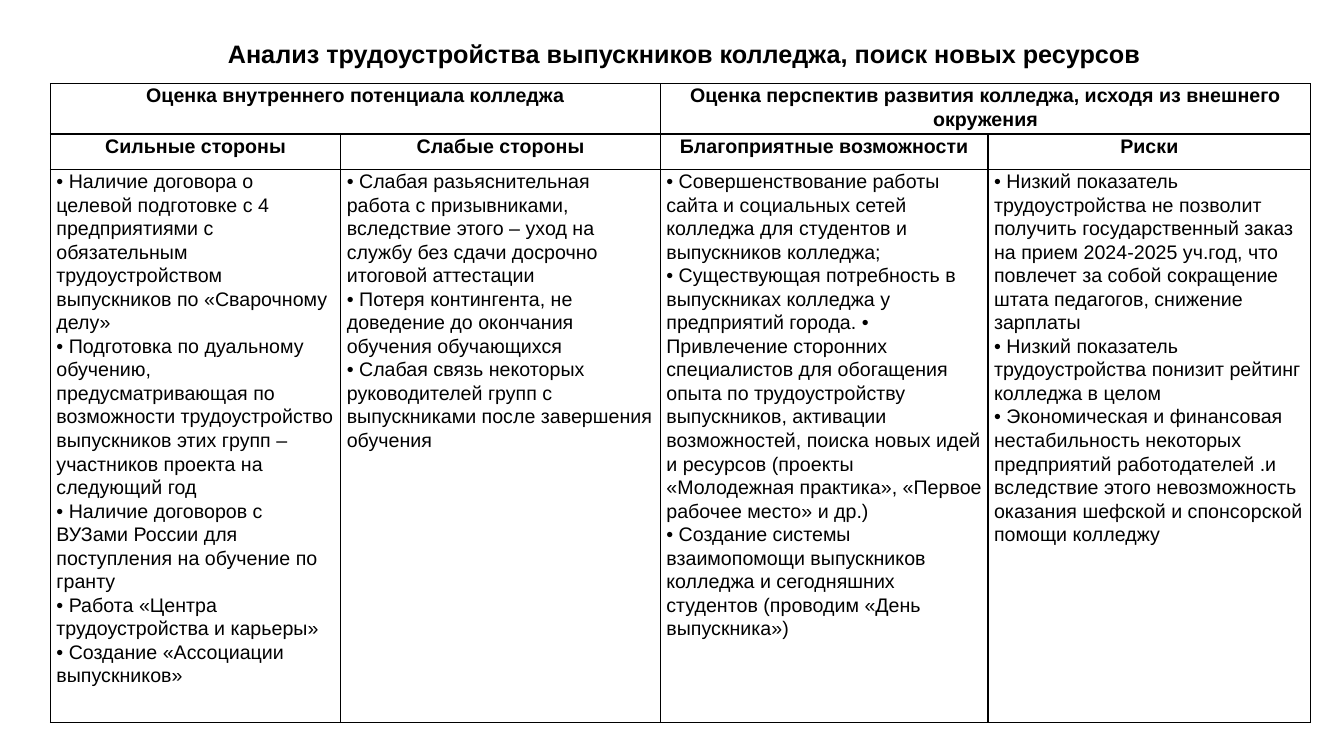
from dataclasses import dataclass

from lxml.etree import SubElement
from pptx import Presentation
from pptx.dml.color import RGBColor
from pptx.enum.text import MSO_ANCHOR, PP_ALIGN
from pptx.oxml.ns import qn
from pptx.table import Table, _Cell as TableCell
from pptx.text.text import _Paragraph as Paragraph
from pptx.util import Inches, Pt

COLORS = {"text": "000000", "border": "000000", "fill": "FFFFFF"}
FONT = "Arial"
COLUMN_WIDTHS = (2.88, 3.17, 3.25, 3.2)
ROW_HEIGHTS = (0.5, 0.35, 5.49)
TITLE = "Анализ трудоустройства выпускников колледжа, поиск новых ресурсов"


@dataclass(frozen=True)
class Factor:
    heading: str
    points: tuple[str, ...]


@dataclass(frozen=True)
class Assessment:
    heading: str
    factors: tuple[Factor, ...]


ASSESSMENTS = (
    Assessment("Оценка внутреннего потенциала колледжа", (
        Factor("Сильные стороны", (
            "• Наличие договора о целевой подготовке с 4 предприятиями с обязательным "
            "трудоустройством выпускников по «Сварочному делу»",
            "• Подготовка по дуальному обучению, предусматривающая по возможности "
            "трудоустройство выпускников этих групп – участников проекта на следующий год",
            "• Наличие договоров с ВУЗами России для поступления на обучение по гранту",
            "• Работа «Центра трудоустройства и карьеры»",
            "• Создание «Ассоциации выпускников»",
        )),
        Factor("Слабые стороны", (
            "• Слабая разьяснительная работа с призывниками, вследствие этого – уход на "
            "службу без сдачи досрочно итоговой аттестации",
            "• Потеря контингента, не доведение до окончания обучения обучающихся",
            "• Слабая связь некоторых руководителей групп с выпускниками после завершения "
            "обучения",
        )),
    )),
    Assessment("Оценка перспектив развития колледжа, исходя из внешнего окружения", (
        Factor("Благоприятные возможности", (
            "• Совершенствование работы сайта и социальных сетей колледжа для студентов и "
            "выпускников колледжа;",
            "• Существующая потребность в выпускниках колледжа у предприятий города. "
            "• Привлечение сторонних специалистов для обогащения опыта по трудоустройству "
            "выпускников, активации возможностей, поиска новых идей и ресурсов (проекты "
            "«Молодежная практика», «Первое рабочее место» и др.)",
            "• Создание системы взаимопомощи выпускников колледжа и сегодняшних студентов "
            "(проводим «День выпускника»)",
        )),
        Factor("Риски", (
            "• Низкий показатель трудоустройства не позволит получить государственный заказ "
            "на прием 2024-2025 уч.год, что повлечет за собой сокращение штата педагогов, "
            "снижение зарплаты",
            "• Низкий показатель трудоустройства понизит рейтинг колледжа в целом",
            "• Экономическая и финансовая нестабильность некоторых предприятий "
            "работодателей .и вследствие этого невозможность оказания шефской и спонсорской "
            "помощи колледжу",
        )),
    )),
)


def format_paragraph(paragraph: Paragraph, size: int, bold: bool, align: PP_ALIGN) -> None:
    paragraph.alignment = align
    paragraph.font.name = FONT
    paragraph.font.size = Pt(size)
    paragraph.font.bold = bold
    paragraph.font.color.rgb = RGBColor.from_string(COLORS["text"])


def style_cell(cell: TableCell) -> None:
    cell.margin_left = cell.margin_right = Inches(0.06)
    cell.margin_top = cell.margin_bottom = 0
    properties = cell._tc.get_or_add_tcPr()
    for side in ("lnL", "lnR", "lnT", "lnB"):
        border = SubElement(properties, qn(f"a:{side}"), w=str(Pt(1)))
        border_fill = SubElement(border, qn("a:solidFill"))
        SubElement(border_fill, qn("a:srgbClr"), val=COLORS["border"])
    cell.fill.solid()
    cell.fill.fore_color.rgb = RGBColor.from_string(COLORS["fill"])


def write_cell(cell: TableCell, lines: tuple[str, ...], heading: bool) -> None:
    cell.text = "\n".join(lines)
    for paragraph in cell.text_frame.paragraphs:
        format_paragraph(paragraph, 14, heading, PP_ALIGN.CENTER if heading else PP_ALIGN.LEFT)
        paragraph.line_spacing = 1.07


def fill_table(table: Table) -> None:
    for column, width in zip(table.columns, COLUMN_WIDTHS):
        column.width = Inches(width)
    for row, height in zip(table.rows, ROW_HEIGHTS):
        row.height = Inches(height)
    for cell in table.iter_cells():
        style_cell(cell)
    column_index = 0
    for assessment in ASSESSMENTS:
        heading_cell = table.cell(0, column_index)
        heading_cell.merge(table.cell(0, column_index + len(assessment.factors) - 1))
        write_cell(heading_cell, (assessment.heading,), True)
        for factor in assessment.factors:
            write_cell(table.cell(1, column_index), (factor.heading,), True)
            write_cell(table.cell(2, column_index), factor.points, False)
            column_index += 1


def main() -> None:
    presentation = Presentation()
    presentation.slide_width = Inches(13.33)
    presentation.slide_height = Inches(7.5)
    slide = presentation.slides.add_slide(presentation.slide_layouts[5])

    title = slide.shapes.title
    title.left, title.top = Inches(2.16), Inches(0.33)
    title.width, title.height = Inches(10.83), Inches(0.4)
    title.text_frame.text = TITLE
    title.text_frame.vertical_anchor = MSO_ANCHOR.TOP
    format_paragraph(title.text_frame.paragraphs[0], 18, True, PP_ALIGN.LEFT)

    swot = slide.shapes.add_table(
        len(ROW_HEIGHTS), len(COLUMN_WIDTHS), Inches(0.5), Inches(0.83),
        Inches(sum(COLUMN_WIDTHS)), Inches(sum(ROW_HEIGHTS)),
    )
    fill_table(swot.table)
    presentation.save("out.pptx")


if __name__ == "__main__":
    main()
